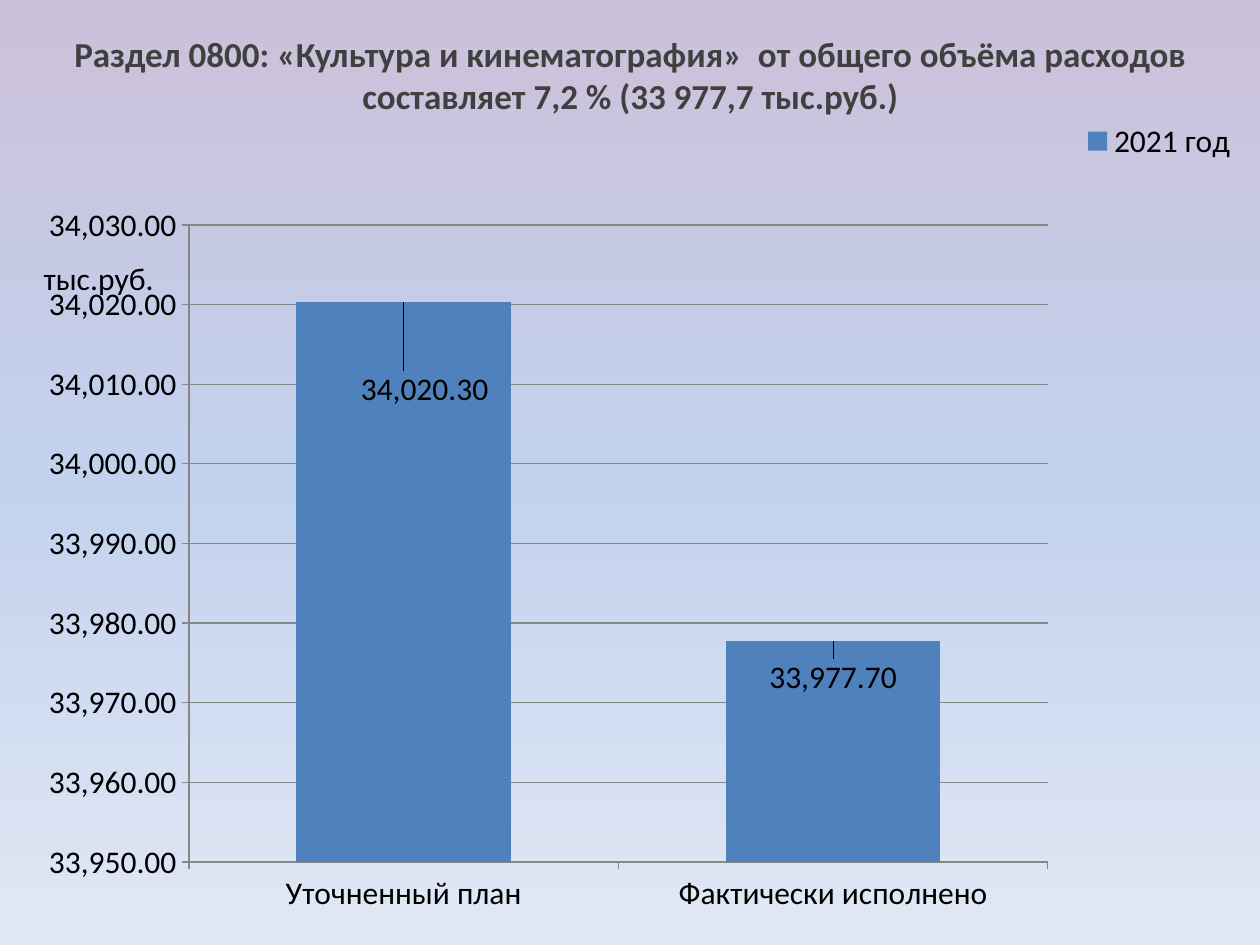
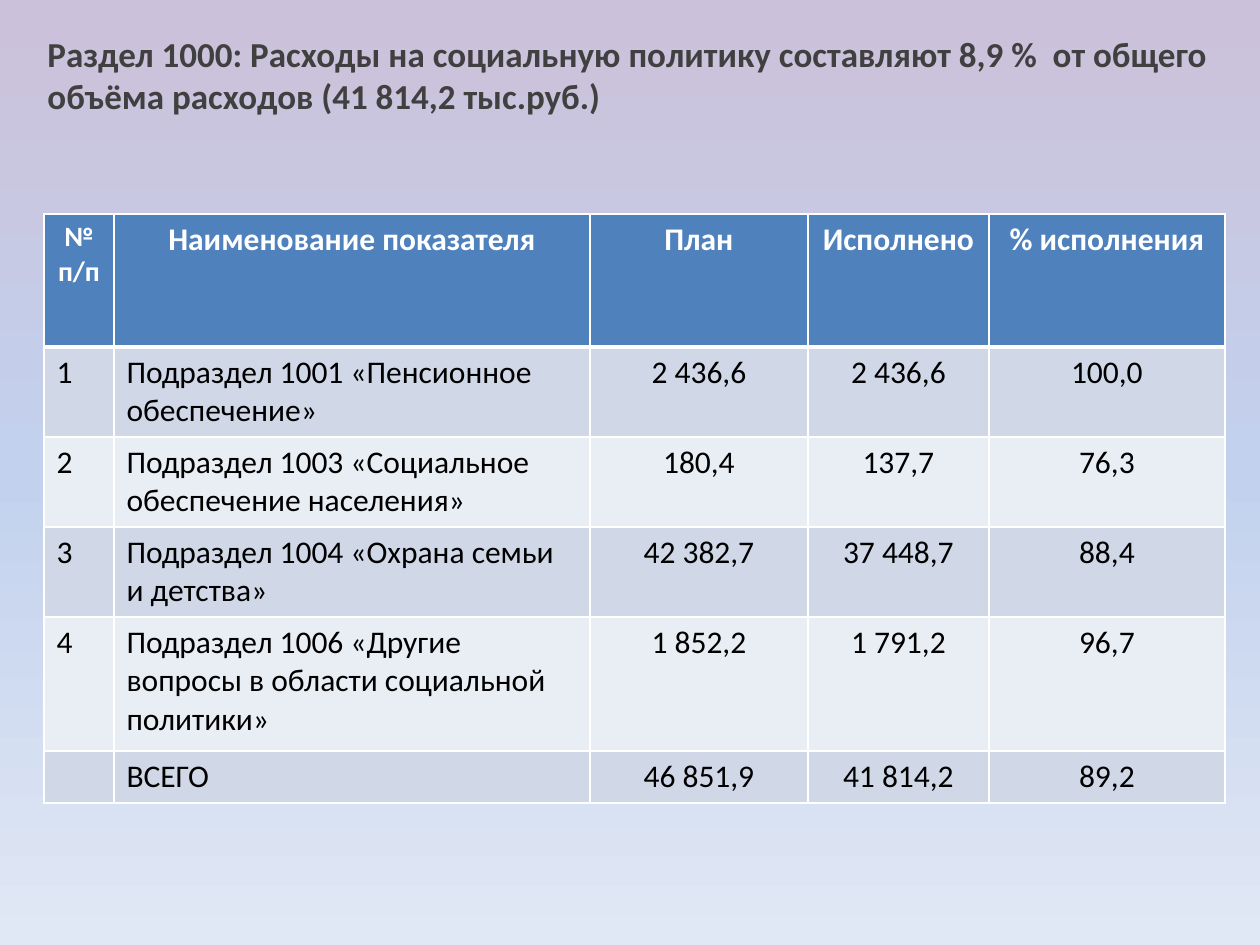
"""Build two budget slides: a culture spending chart and a social policy table."""
import copy
from dataclasses import dataclass

import lxml.etree
import pptx
import pptx.chart.data
import pptx.dml.color
import pptx.enum.chart
import pptx.enum.text
import pptx.oxml.ns
import pptx.util

ALIGN = pptx.enum.text.PP_ALIGN
CHART = pptx.enum.chart


@dataclass(frozen=True)
class Theme:
    font: str = "Calibri"
    title_size: int = 20
    body_size: int = 18
    small_size: int = 16
    title: str = "404040"
    text: str = "000000"
    white: str = "FFFFFF"
    accent: str = "4F81BD"
    rule: str = "868686"
    bands: tuple[str, ...] = ("D0D8E8", "E9EDF4")
    background: tuple[str, ...] = ("CCC1DA", "C2D1ED", "E1E8F5")


@dataclass(frozen=True)
class Frame:
    left: int
    top: int
    width: int
    height: int

    def emu(self) -> tuple[pptx.util.Emu, ...]:
        return tuple(px(n) for n in (self.left, self.top, self.width, self.height))


@dataclass(frozen=True)
class Bar:
    category: str
    value: float
    label_dx: int
    label_dy: int


@dataclass(frozen=True)
class Column:
    heading: str
    width: int
    align: ALIGN
    heading_size: int


@dataclass(frozen=True)
class Row:
    height: int
    cells: tuple[str, ...]


THEME = Theme()
PIXELS_PER_INCH = 126
PAGE = Frame(0, 0, 1260, 945)
TITLE = Frame(35, 26, 1191, 69)
CHART_FRAME = Frame(25, 116, 1221, 814)
PLOT = Frame(189, 225, 859, 637)
LEGEND = Frame(1085, 122, 155, 38)
UNIT_LABEL = Frame(38, 251, 0, 0)
TABLE_LEFT, TABLE_TOP, HEADER_HEIGHT = 44, 214, 133
NUMBER_FORMAT = "#,##0.00"

CULTURE_TITLE = ("Раздел 0800: «Культура и кинематография»  от общего объёма расходов "
                 "составляет 7,2 % (33 977,7 тыс.руб.)")
SOCIAL_TITLE = ("Раздел 1000: Расходы на социальную политику составляют 8,9 %  от общего "
                "объёма расходов (41 814,2 тыс.руб.)")
BARS = (
    Bar("Уточненный план", 34020.3, 21, 111),
    Bar("Фактически исполнено", 33977.7, 0, 60),
)
COLUMNS = (
    Column("№ п/п", 70, ALIGN.LEFT, THEME.small_size),
    Column("Наименование показателя", 476, ALIGN.LEFT, THEME.body_size),
    Column("План", 218, ALIGN.CENTER, THEME.body_size),
    Column("Исполнено", 181, ALIGN.CENTER, THEME.body_size),
    Column("% исполнения", 236, ALIGN.CENTER, THEME.body_size),
)
ROWS = (
    Row(90, ("1", "Подраздел 1001 «Пенсионное обеспечение»", "2 436,6", "2 436,6", "100,0")),
    Row(90, ("2", "Подраздел 1003 «Социальное обеспечение населения»",
             "180,4", "137,7", "76,3")),
    Row(90, ("3", "Подраздел 1004 «Охрана семьи и детства»", "42 382,7", "37 448,7", "88,4")),
    Row(134, ("4", "Подраздел 1006 «Другие вопросы в области социальной политики»",
              "1 852,2", "1 791,2", "96,7")),
    Row(52, ("", "ВСЕГО", "46 851,9", "41 814,2", "89,2")),
)


def px(length: int) -> pptx.util.Emu:
    return pptx.util.Emu(round(length * 914400 / PIXELS_PER_INCH))


def rgb(code: str) -> pptx.dml.color.RGBColor:
    return pptx.dml.color.RGBColor.from_string(code)


def style_font(font, size: int, color: str, bold: bool = False) -> None:
    font.name = THEME.font
    font.size = pptx.util.Pt(size)
    font.bold = bold
    font.color.rgb = rgb(color)


def style_line(line, color: str) -> None:
    line.color.rgb = rgb(color)
    line.width = pptx.util.Pt(0.75)


def style_text(text_frame, size: int, color: str, align: ALIGN, bold: bool) -> None:
    for para in text_frame.paragraphs:
        para.alignment = align
        for span in para.runs:
            style_font(span.font, size, color, bold)


def add_page(deck, title: str, align: ALIGN):
    page = deck.slides.add_slide(deck.slide_layouts[6])
    fill = page.background.fill
    fill.gradient()
    fill.gradient_angle = 270
    stop_list = page.element.xpath(".//a:gsLst")[0]
    stop_list.append(copy.deepcopy(stop_list[-1]))
    for index, stop in enumerate(fill.gradient_stops):
        stop.color.rgb = rgb(THEME.background[index])
        stop.position = index / 2
    box = page.shapes.add_textbox(*TITLE.emu())
    box.text_frame.word_wrap = True
    box.text_frame.text = title
    style_text(box.text_frame, THEME.title_size, THEME.title, align, True)
    return page


def set_layout(parent, index: int, values: dict[str, float | str]) -> None:
    for old in parent.findall(pptx.oxml.ns.qn("c:layout")):
        parent.remove(old)
    layout = lxml.etree.Element(pptx.oxml.ns.qn("c:layout"))
    manual = lxml.etree.SubElement(layout, pptx.oxml.ns.qn("c:manualLayout"))
    for name, value in values.items():
        text = value if isinstance(value, str) else f"{value:.4f}"
        lxml.etree.SubElement(manual, pptx.oxml.ns.qn(f"c:{name}")).set("val", text)
    parent.insert(index, layout)


def frame_layout(frame: Frame, inner: bool = False) -> dict[str, float | str]:
    values: dict[str, float | str] = {"layoutTarget": "inner"} if inner else {}
    values |= {
        "xMode": "edge", "yMode": "edge",
        "x": (frame.left - CHART_FRAME.left) / CHART_FRAME.width,
        "y": (frame.top - CHART_FRAME.top) / CHART_FRAME.height,
    }
    if frame.width:
        values |= {"w": frame.width / CHART_FRAME.width, "h": frame.height / CHART_FRAME.height}
    return values


def add_spending_chart(page) -> None:
    data = pptx.chart.data.CategoryChartData(number_format=NUMBER_FORMAT)
    data.categories = [bar.category for bar in BARS]
    data.add_series("2021 год", [bar.value for bar in BARS])
    chart = page.shapes.add_chart(
        CHART.XL_CHART_TYPE.COLUMN_CLUSTERED, *CHART_FRAME.emu(), data).chart
    style_font(chart.font, THEME.body_size, THEME.text)

    chart.has_title = True
    chart.chart_title.text_frame.text = "тыс.руб."
    style_text(chart.chart_title.text_frame, THEME.body_size, THEME.text, ALIGN.CENTER, False)
    chart.chart_title.include_in_layout = False
    chart.has_legend = True
    chart.legend.position = CHART.XL_LEGEND_POSITION.CORNER
    chart.legend.include_in_layout = False

    for axis in (chart.category_axis, chart.value_axis):
        axis.major_tick_mark = CHART.XL_TICK_MARK.OUTSIDE
        style_line(axis.format.line, THEME.rule)
    values = chart.value_axis
    values.minimum_scale, values.maximum_scale, values.major_unit = 33950, 34030, 10
    values.tick_labels.number_format = NUMBER_FORMAT
    values.tick_labels.number_format_is_linked = False
    style_line(values.major_gridlines.format.line, THEME.rule)

    plot = chart.plots[0]
    plot.gap_width = 100
    plot.vary_by_categories = False
    series = plot.series[0]
    series.format.fill.solid()
    series.format.fill.fore_color.rgb = rgb(THEME.accent)
    labels = series.data_labels
    labels.show_value = True
    labels.number_format = NUMBER_FORMAT
    labels.number_format_is_linked = False
    for index in range(len(BARS)):
        label = series.points[index].data_label
        label.position = CHART.XL_LABEL_POSITION.OUTSIDE_END
        style_font(label.font, THEME.body_size, THEME.text)

    root = chart.element if hasattr(chart, "element") else chart._chartSpace
    set_layout(root.xpath(".//c:chart/c:title")[0], 1, frame_layout(UNIT_LABEL))
    set_layout(root.xpath(".//c:plotArea")[0], 0, frame_layout(PLOT, inner=True))
    set_layout(root.xpath(".//c:legend")[0], 1, frame_layout(LEGEND))
    for bar, element in zip(BARS, root.xpath(".//c:dLbl")):
        set_layout(element, 1, {"x": bar.label_dx / CHART_FRAME.width,
                                "y": bar.label_dy / CHART_FRAME.height})


def set_borders(cell, top: int, bottom: int) -> None:
    properties = cell._tc.get_or_add_tcPr()
    widths = {"lnL": 1, "lnR": 1, "lnT": top, "lnB": bottom}
    for index, (side, width) in enumerate(widths.items()):
        line = lxml.etree.Element(pptx.oxml.ns.qn(f"a:{side}"), w=str(pptx.util.Pt(width)))
        fill = lxml.etree.SubElement(line, pptx.oxml.ns.qn("a:solidFill"))
        lxml.etree.SubElement(fill, pptx.oxml.ns.qn("a:srgbClr")).set("val", THEME.white)
        properties.insert(index, line)


def fill_cell(cell, text: str, fill: str) -> None:
    cell.text_frame.text = text
    cell.fill.solid()
    cell.fill.fore_color.rgb = rgb(fill)


def add_spending_table(page) -> None:
    heights = [HEADER_HEIGHT, *(row.height for row in ROWS)]
    frame = Frame(TABLE_LEFT, TABLE_TOP, sum(column.width for column in COLUMNS), sum(heights))
    table = page.shapes.add_table(len(heights), len(COLUMNS), *frame.emu()).table
    table.first_row = table.horz_banding = False
    for index, height in enumerate(heights):
        table.rows[index].height = px(height)
    for x, column in enumerate(COLUMNS):
        table.columns[x].width = px(column.width)
        heading = table.cell(0, x)
        fill_cell(heading, column.heading, THEME.accent)
        style_text(heading.text_frame, column.heading_size, THEME.white, ALIGN.CENTER, True)
        set_borders(heading, 1, 3)
        for y, row in enumerate(ROWS):
            cell = table.cell(y + 1, x)
            fill_cell(cell, row.cells[x], THEME.bands[y % 2])
            style_text(cell.text_frame, THEME.body_size, THEME.text, column.align, False)
            set_borders(cell, 1 if y else 3, 1)


def main() -> None:
    deck = pptx.Presentation()
    deck.slide_width, deck.slide_height = px(PAGE.width), px(PAGE.height)
    add_spending_chart(add_page(deck, CULTURE_TITLE, ALIGN.CENTER))
    add_spending_table(add_page(deck, SOCIAL_TITLE, ALIGN.LEFT))
    deck.save("out.pptx")


if __name__ == "__main__":
    main()
